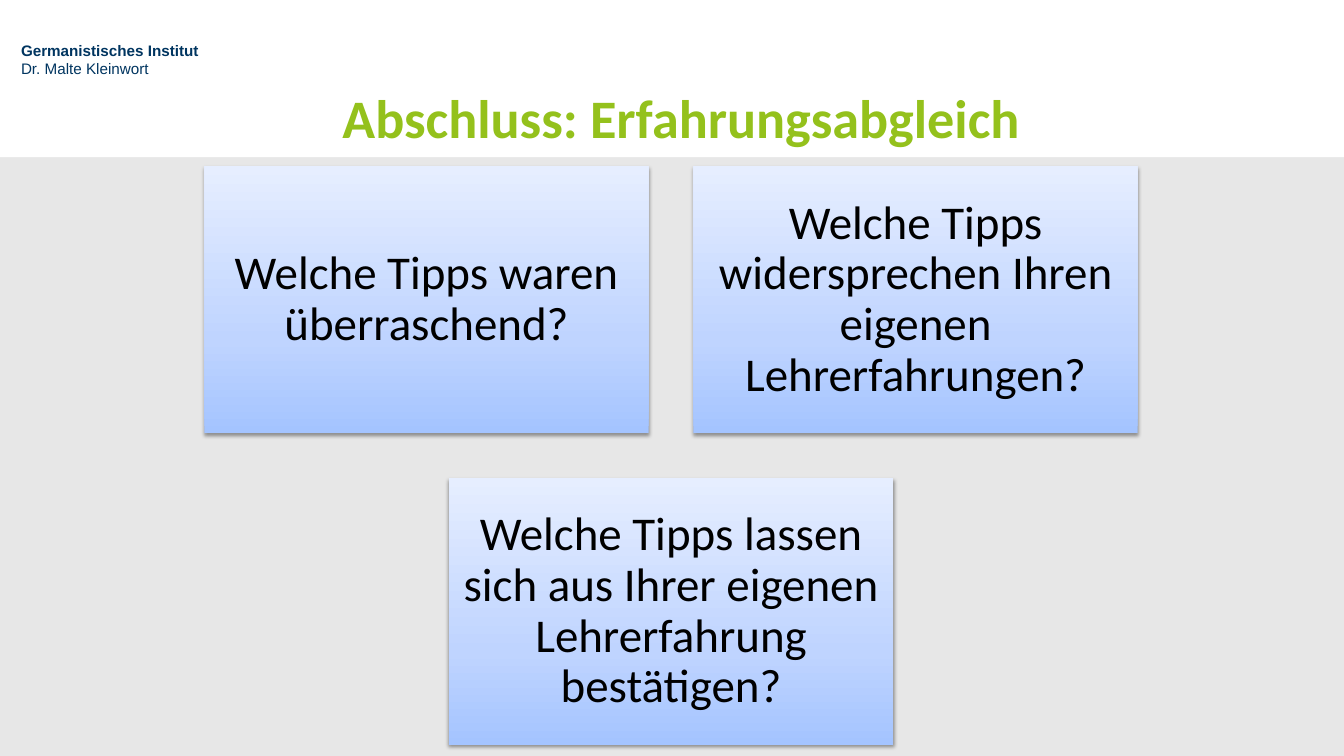
"""Build the closing slide with three questions on teaching tips."""
from copy import deepcopy

from lxml import etree
from pptx import Presentation
from pptx.dml.color import RGBColor
from pptx.enum.shapes import MSO_SHAPE
from pptx.enum.text import MSO_ANCHOR, PP_ALIGN
from pptx.oxml.ns import qn
from pptx.util import Inches, Pt

RECTANGLE = MSO_SHAPE.RECTANGLE
CENTER, LEFT = PP_ALIGN.CENTER, PP_ALIGN.LEFT
TOP, MIDDLE = MSO_ANCHOR.TOP, MSO_ANCHOR.MIDDLE

COLORS = {
    "background": "E7E7E7",
    "band": "FFFFFF",
    "sender": "003560",
    "title": "94C11C",
    "question": "000000",
    "shadow": "000000",
}
CARD_GRADIENT = [(0, "A4C4FF"), (0.35, "BFD4FF"), (1, "E6EEFF")]
CARD_SHADOW = {"blurRad": Pt(3.1), "dist": Pt(1.6), "dir": 90 * 60000,
               "algn": "ctr", "rotWithShape": 0}
SHADOW_ALPHA = 38000

TITLE = "Abschluss: Erfahrungsabgleich"
SENDER = [("Germanistisches Institut", True), ("Dr. Malte Kleinwort", False)]
QUESTION_ROWS = [
    ["Welche Tipps waren überraschend?",
     "Welche Tipps widersprechen Ihren eigenen Lehrerfahrungen?"],
    ["Welche Tipps lassen sich aus Ihrer eigenen Lehrerfahrung bestätigen?"],
]

SLIDE_W, SLIDE_H = 14.7, 8.27
BAND_H = 1.72
CARD_W, CARD_H, CARD_GAP = 4.86, 2.92, 0.49
CARDS_CENTER, CARDS_TOP = 7.34, 1.82


def rgb(name):
    return RGBColor.from_string(COLORS[name])


def write(shape, lines, font_name, size, color, align, anchor, inset):
    frame = shape.text_frame
    frame.word_wrap = True
    frame.vertical_anchor = anchor
    frame.margin_left = frame.margin_right = Inches(inset[0])
    frame.margin_top = frame.margin_bottom = Inches(inset[1])
    frame.text = "\n".join(text for text, _ in lines)
    for paragraph, (_, bold) in zip(frame.paragraphs, lines):
        paragraph.alignment = align
        font = paragraph.font
        font.name, font.size, font.bold = font_name, Pt(size), bold
        font.color.rgb = rgb(color)


def add_rectangle(slide, left, top, width, height):
    shape = slide.shapes.add_shape(
        RECTANGLE, Inches(left), Inches(top), Inches(width), Inches(height))
    shape.line.fill.background()
    shape.shadow.inherit = False
    return shape


def add_card(slide, left, top, question):
    card = add_rectangle(slide, left, top, CARD_W, CARD_H)
    card.fill.gradient()
    card.fill.gradient_angle = 90
    properties = card.element.spPr
    stops = properties.find(".//" + qn("a:gsLst"))
    stops.append(deepcopy(stops[-1]))
    for stop, (position, color) in zip(card.fill.gradient_stops, CARD_GRADIENT):
        stop.position = position
        stop.color.rgb = RGBColor.from_string(color)

    effects = properties.find(qn("a:effectLst"))
    shadow = etree.SubElement(effects, qn("a:outerShdw"),
                              {key: str(value) for key, value in CARD_SHADOW.items()})
    tint = etree.SubElement(shadow, qn("a:srgbClr"), val=COLORS["shadow"])
    etree.SubElement(tint, qn("a:alpha"), val=str(SHADOW_ALPHA))

    write(card, [(question, False)], "Calibri", 37, "question", CENTER, MIDDLE, (0.15, 0.15))
    card.text_frame.paragraphs[0].line_spacing = 0.9


def main():
    deck = Presentation()
    deck.slide_width, deck.slide_height = Inches(SLIDE_W), Inches(SLIDE_H)
    slide = deck.slides.add_slide(deck.slide_layouts[6])
    slide.background.fill.solid()
    slide.background.fill.fore_color.rgb = rgb("background")

    band = add_rectangle(slide, 0, 0, SLIDE_W, BAND_H)
    band.fill.solid()
    band.fill.fore_color.rgb = rgb("band")

    sender = slide.shapes.add_textbox(Inches(0.23), Inches(0.45), Inches(2.85), Inches(0.63))
    write(sender, SENDER, "Arial", 12, "sender", LEFT, TOP, (0, 0))

    title = slide.shapes.add_textbox(Inches(0.21), Inches(0.87), Inches(14.49), Inches(0.82))
    write(title, [(TITLE, True)], "Calibri", 42.7, "title", CENTER, MIDDLE, (0.1, 0.05))

    for row, questions in enumerate(QUESTION_ROWS):
        row_width = len(questions) * (CARD_W + CARD_GAP) - CARD_GAP
        top = CARDS_TOP + row * (CARD_H + CARD_GAP)
        for column, question in enumerate(questions):
            left = CARDS_CENTER - row_width / 2 + column * (CARD_W + CARD_GAP)
            add_card(slide, left, top, question)

    deck.save("out.pptx")


if __name__ == "__main__":
    main()
